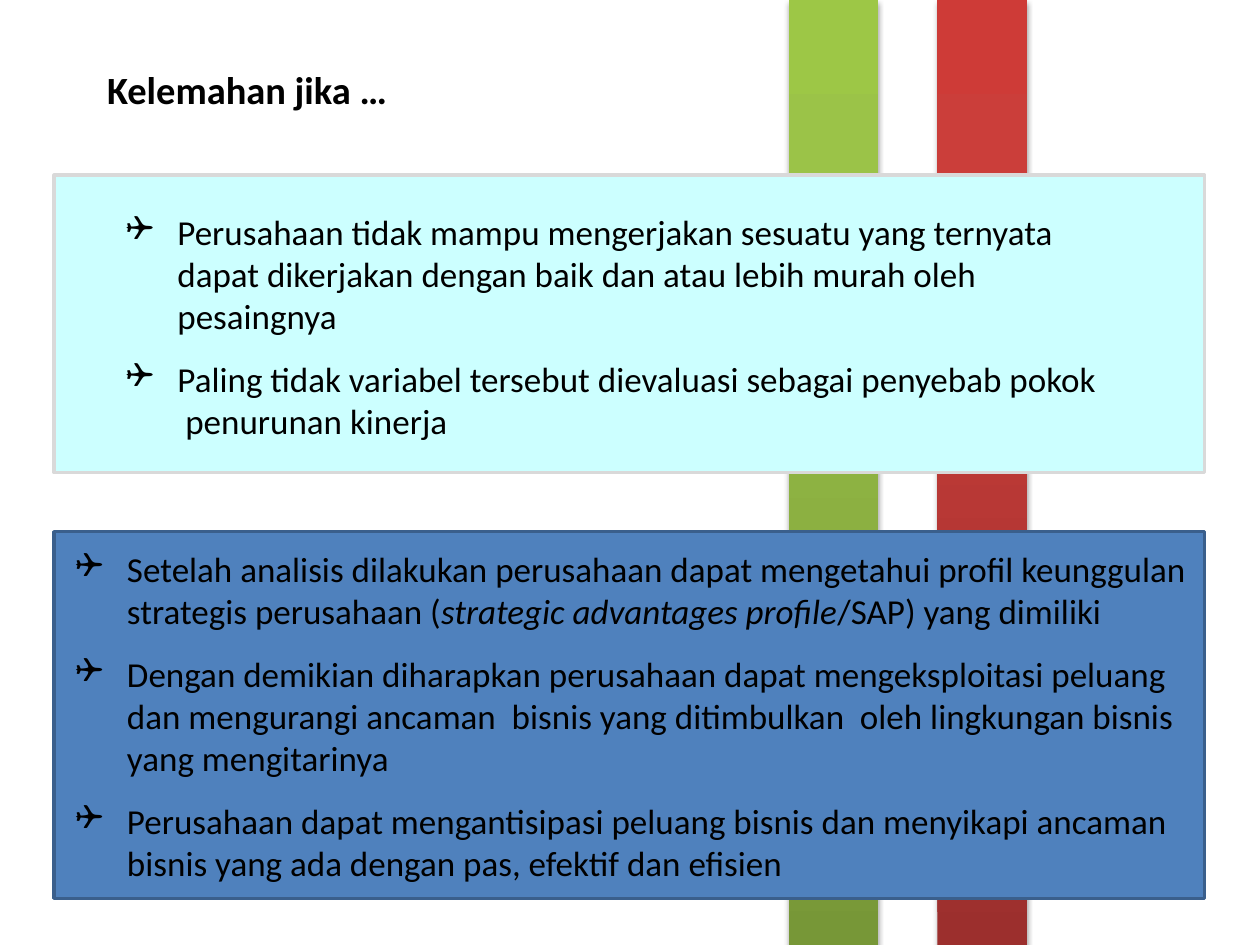
from copy import deepcopy

from lxml.etree import SubElement
from pptx import Presentation
from pptx.dml.color import RGBColor
from pptx.enum.shapes import MSO_SHAPE
from pptx.enum.text import MSO_ANCHOR, MSO_AUTO_SIZE, PP_ALIGN
from pptx.oxml.ns import qn
from pptx.util import Inches, Pt

# Content: each bullet is a list of (text, italic) runs
TITLE = "Kelemahan jika …"
WEAKNESSES = [
    [("Perusahaan tidak mampu mengerjakan sesuatu yang ternyata dapat dikerjakan "
      "dengan baik dan atau lebih murah oleh pesaingnya", False)],
    [("Paling tidak variabel tersebut dievaluasi sebagai penyebab pokok  "
      "penurunan kinerja", False)],
]
CONCLUSIONS = [
    [("Setelah analisis dilakukan perusahaan dapat mengetahui profil keunggulan "
      "strategis perusahaan (", False),
     ("strategic advantages profile", True),
     ("/SAP) yang dimiliki", False)],
    [("Dengan demikian diharapkan perusahaan dapat mengeksploitasi peluang dan "
      "mengurangi ancaman  bisnis yang ditimbulkan  oleh lingkungan bisnis yang "
      "mengitarinya", False)],
    [("Perusahaan dapat mengantisipasi peluang bisnis dan menyikapi ancaman bisnis "
      "yang ada dengan pas, efektif dan efisien", False)],
]

FONT = "Calibri"
BLACK = RGBColor(0x00, 0x00, 0x00)
CYAN = RGBColor(0xCC, 0xFF, 0xFF)
GREY = RGBColor(0xD9, 0xD9, 0xD9)
BLUE = RGBColor(0x4F, 0x81, 0xBD)
NAVY = RGBColor(0x3A, 0x5F, 0x8C)
REDS = [RGBColor(0x9C, 0x2F, 0x2D), RGBColor(0xCB, 0x3E, 0x3A), RGBColor(0xCE, 0x3B, 0x37)]
GREENS = [RGBColor(0x77, 0x97, 0x37), RGBColor(0x9B, 0xC3, 0x48), RGBColor(0x9D, 0xC7, 0x46)]
STOPS = [0, 0.8, 1]
BARS = [(7.44, REDS), (6.26, GREENS)]
BAR_W = 0.71
PANEL_X, PANEL_W = 0.43, 9.13


def add_rect(x, y, w, h):
    s = slide.shapes.add_shape(MSO_SHAPE.RECTANGLE, Inches(x), Inches(y), Inches(w), Inches(h))
    s.shadow.inherit = False
    return s


def add_bar(x, colors):
    s = add_rect(x, 0, BAR_W, 7.5)
    s.line.fill.background()
    s.fill.gradient()
    s.fill.gradient_angle = 90
    sp_pr = s._element.spPr
    gs_list = sp_pr.find(".//" + qn("a:gsLst"))
    gs_list.append(deepcopy(gs_list[-1]))
    for stop, position, color in zip(s.fill.gradient_stops, STOPS, colors):
        stop.position = position
        stop.color.rgb = color
    # Soft shadow below the bar
    shadow = SubElement(sp_pr.find(qn("a:effectLst")), qn("a:outerShdw"),
                        blurRad=str(Pt(3.1)), dist=str(Pt(1.8)), dir="5400000", rotWithShape="0")
    black = SubElement(shadow, qn("a:srgbClr"), val="000000")
    SubElement(black, qn("a:alpha"), val="35000")


def add_panel(y, h, fill, line):
    s = add_rect(PANEL_X, y, PANEL_W, h)
    s.fill.solid()
    s.fill.fore_color.rgb = fill
    s.line.color.rgb = line
    s.line.width = Pt(2)
    return s


def style(p, size, bold=False):
    p.alignment = PP_ALIGN.LEFT
    p.font.name = FONT
    p.font.size = Pt(size)
    p.font.bold = bold
    p.font.color.rgb = BLACK


def write_bullets(tf, bullets):
    tf.word_wrap = True
    for i, runs in enumerate(bullets):
        p = tf.add_paragraph() if i else tf.paragraphs[0]
        p_pr = p._p.get_or_add_pPr()
        p_pr.set("marL", str(Inches(0.48)))
        p_pr.set("indent", str(Inches(-0.41)))
        SubElement(p_pr, qn("a:buFont"), typeface="Wingdings")
        SubElement(p_pr, qn("a:buChar"), char="❑")
        style(p, 20)
        if i:
            p.space_before = Pt(12)
        for text, italic in runs:
            r = p.add_run()
            r.text = text
            if italic:
                r.font.italic = True


prs = Presentation()
prs.slide_width, prs.slide_height = Inches(10), Inches(7.5)
slide = prs.slides.add_slide(prs.slide_layouts[5])

# Background bars
for x, colors in BARS:
    add_bar(x, colors)

# Title
title = slide.shapes.title
title.left, title.top, title.width, title.height = map(Inches, (0.75, 0.47, 2.95, 0.47))
tf = title.text_frame
tf.text = TITLE
tf.word_wrap = False
tf.auto_size = MSO_AUTO_SIZE.NONE
tf.vertical_anchor = MSO_ANCHOR.TOP
style(tf.paragraphs[0], 22, bold=True)

# Weaknesses: panel with inset text
add_panel(1.39, 2.36, CYAN, GREY)
body = slide.shapes.add_textbox(Inches(0.83), Inches(1.62), Inches(8.03), Inches(2.1))
write_bullets(body.text_frame, WEAKNESSES)

# Conclusions: text inside the panel
panel = add_panel(4.22, 2.91, BLUE, NAVY)
panel.text_frame.vertical_anchor = MSO_ANCHOR.MIDDLE
write_bullets(panel.text_frame, CONCLUSIONS)

prs.save("out.pptx")
